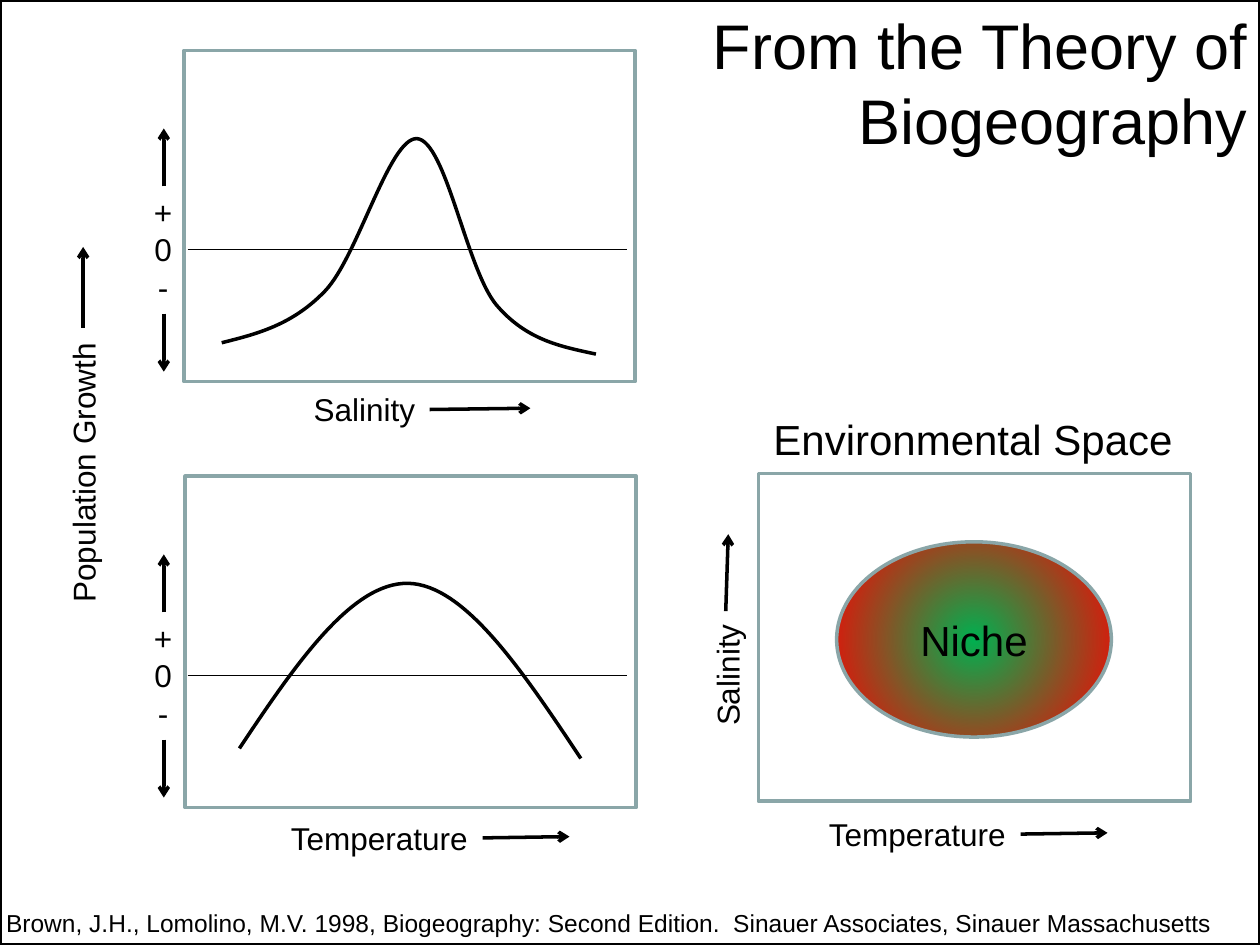
from lxml import etree
from pptx import Presentation
from pptx.dml.color import RGBColor
from pptx.enum import shapes, text
from pptx.oxml.ns import qn
from pptx.util import Inches, Pt

INK, EDGE, PAPER = "000000", "8AA6A8", "FFFFFF"
LEFT, MID, RIGHT = text.PP_ALIGN.LEFT, text.PP_ALIGN.CENTER, text.PP_ALIGN.RIGHT
KIND = shapes.MSO_SHAPE

prs = Presentation()
prs.slide_width, prs.slide_height = Inches(10), Inches(7.5)
slide = prs.slides.add_slide(prs.slide_layouts[5])
items = slide.shapes


def rgb(code):
    return RGBColor.from_string(code)


def write(words, box=None, shape=None, size=18, align=LEFT, wrap=False, turn=0,
          fit=text.MSO_AUTO_SIZE.SHAPE_TO_FIT_TEXT, anchor=text.MSO_ANCHOR.TOP):
    """Put text in a given shape, or in a new text box; one paragraph per line."""
    if shape is None:
        shape = items.add_textbox(*map(Inches, box))
    shape.rotation = turn
    frame = shape.text_frame
    frame.text = words
    frame.word_wrap = wrap
    frame.auto_size = fit
    frame.vertical_anchor = anchor
    for para in frame.paragraphs:
        para.alignment = align
        para.font.size, para.font.name = Pt(size), "Arial"
        para.font.color.rgb = rgb(INK)


# Slide border, two growth panels, environmental space and niche
areas = [
    (KIND.RECTANGLE, (0, 0, 10, 7.5), INK),
    (KIND.RECTANGLE, (1.46, 0.4, 3.58, 2.63), EDGE),
    (KIND.RECTANGLE, (1.47, 3.78, 3.58, 2.63), EDGE),
    (KIND.RECTANGLE, (6.02, 3.76, 3.43, 2.6), EDGE),
    (KIND.OVAL, (6.64, 4.3, 2.18, 1.55), EDGE),
]
for kind, box, color in areas:
    area = items.add_shape(kind, *map(Inches, box))
    area.shadow.inherit = False
    if color == INK:
        area.fill.solid()
        area.fill.fore_color.rgb = rgb(PAPER)
    else:
        area.fill.background()
    area.line.color.rgb, area.line.width = rgb(color), Pt(2)

# The last area is the niche: green centre, red rim
niche = area
niche.fill.gradient()
for stop, color in zip(niche.fill.gradient_stops, ("00B050", "FF0000")):
    stop.color.rgb = rgb(color)
grad = niche._element.spPr.find(qn("a:gradFill"))
grad.remove(grad.find(qn("a:lin")))
focus = etree.SubElement(grad, qn("a:path"), path="circle")
etree.SubElement(focus, qn("a:fillToRect"), l="50000", t="50000", r="50000", b="50000")
write("Niche", shape=niche, size=24, align=MID, wrap=True,
      fit=text.MSO_AUTO_SIZE.NONE, anchor=text.MSO_ANCHOR.MIDDLE)

# Axis arrows, then the scale and zero line of each growth panel
lines = [
    ((0.66, 2.6, 0.66, 1.96), 2),
    ((3.41, 3.25, 4.21, 3.24), 2),
    ((3.83, 6.65, 4.52, 6.64), 2),
    ((5.76, 4.85, 5.78, 4.24), 2),
    ((8.1, 6.62, 8.79, 6.61), 2),
]
for zero in (1.98, 5.36):
    lines += [
        ((1.3, zero - 0.5, 1.3, zero - 0.96), 2),
        ((1.3, zero + 0.51, 1.3, zero + 0.97), 2),
        ((1.49, zero, 4.98, zero), 0.75),
    ]
    write("+\n0\n-", (1.1, zero - 0.5, 0.39, 1.01), align=MID, wrap=True)

for ends, width in lines:
    line = items.add_connector(shapes.MSO_CONNECTOR.STRAIGHT, *map(Inches, ends))
    line.line.color.rgb, line.line.width = rgb(INK), Pt(width)
    etree.SubElement(line._element.spPr, qn("a:effectLst"))
    if width == 2:
        etree.SubElement(line.line._get_or_add_ln(), qn("a:tailEnd"), type="arrow")

# Growth curves: a start point, then two handles and an end point per cubic piece
curves = [
    [(1.9, 5.94), (2.34, 5.28), (2.79, 4.62), (3.24, 4.63),
     (3.69, 4.64), (4.15, 5.33), (4.61, 6.02)],
    [(1.76, 2.72), (2.04, 2.65), (2.32, 2.58), (2.58, 2.31), (2.84, 2.04),
     (3.09, 1.09), (3.31, 1.1), (3.54, 1.12), (3.7, 2.13), (3.94, 2.42),
     (4.18, 2.7), (4.45, 2.75), (4.73, 2.81)],
]
for knots in curves:
    start, *rest = [tuple(map(Inches, knot)) for knot in knots]
    pen = items.build_freeform(*start)
    pen.add_line_segments(rest, close=False)
    curve = pen.convert_to_shape()
    curve.shadow.inherit = False
    curve.fill.background()
    curve.line.color.rgb, curve.line.width = rgb(INK), Pt(2)
    # Join every three straight segments into one cubic piece
    track = next(curve._element.iter(qn("a:path")))
    legs = track.findall(qn("a:lnTo"))
    for first in range(0, len(legs), 3):
        cubic = etree.SubElement(track, qn("a:cubicBezTo"))
        for leg in legs[first:first + 3]:
            cubic.append(leg[0])
            track.remove(leg)

# Labels
write("Population Growth", (-0.48, 3.54, 2.28, 0.4), turn=270)
write("Salinity", (2.39, 3.05, 1.02, 0.4))
write("Temperature", (2.21, 6.45, 1.62, 0.4))
write("Salinity", (5.26, 5.15, 1.02, 0.4), turn=270)
write("Temperature", (6.48, 6.42, 1.62, 0.4))
write("Environmental Space", (6.04, 3.23, 3.41, 0.51), size=24)
write("Brown, J.H., Lomolino, M.V. 1998, Biogeography: Second Edition.  "
      "Sinauer Associates, Sinauer Massachusetts",
      (-0.05, 7.16, 10.05, 0.34), size=14, wrap=True)

# Title, brought in front of the filled border
title = items.title
title.left, title.top, title.width, title.height = map(Inches, (5.23, 0, 4.77, 1.31))
write("From the Theory of\nBiogeography", shape=title, size=36, align=RIGHT)
items._spTree.append(title._element)

prs.save("out.pptx")
